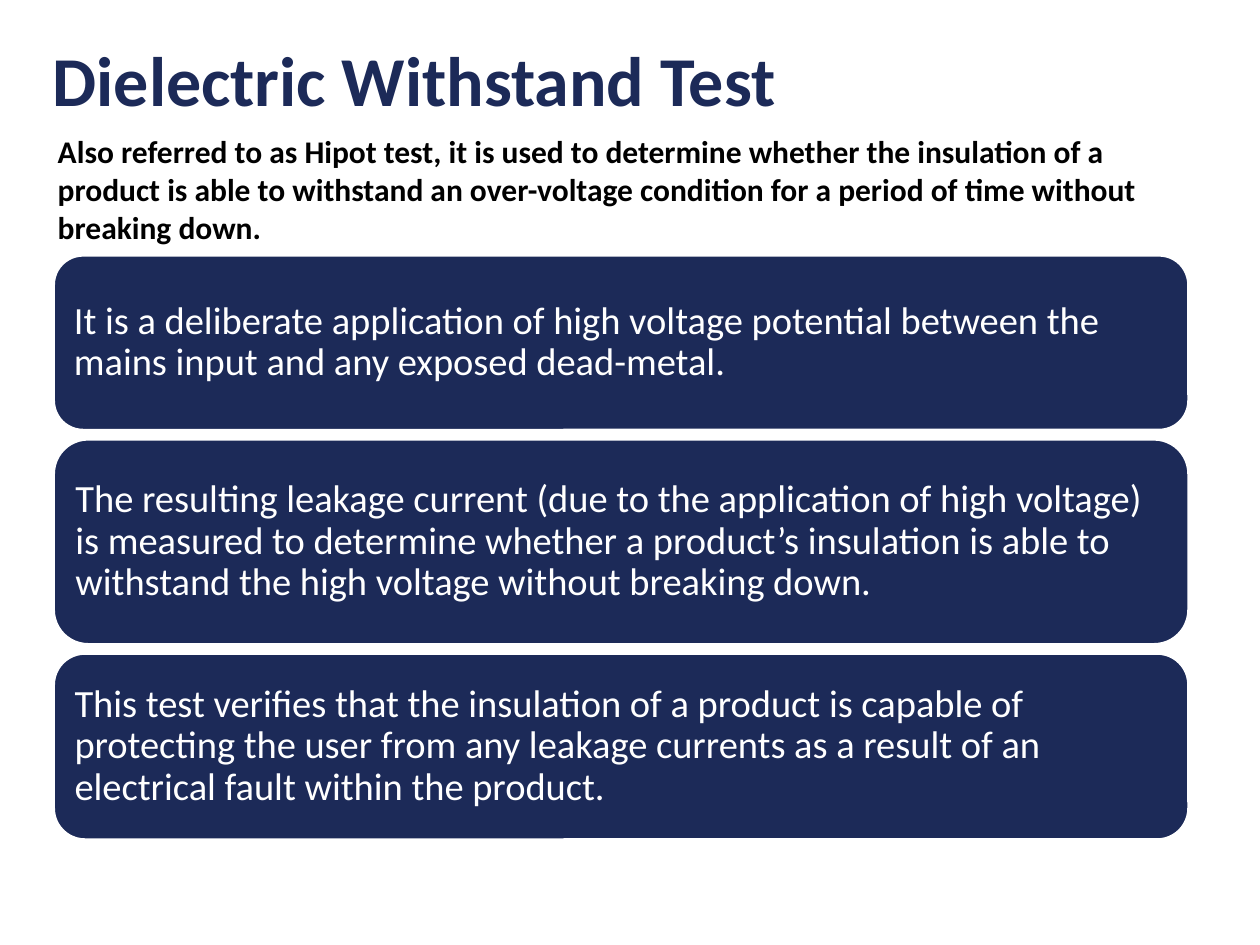
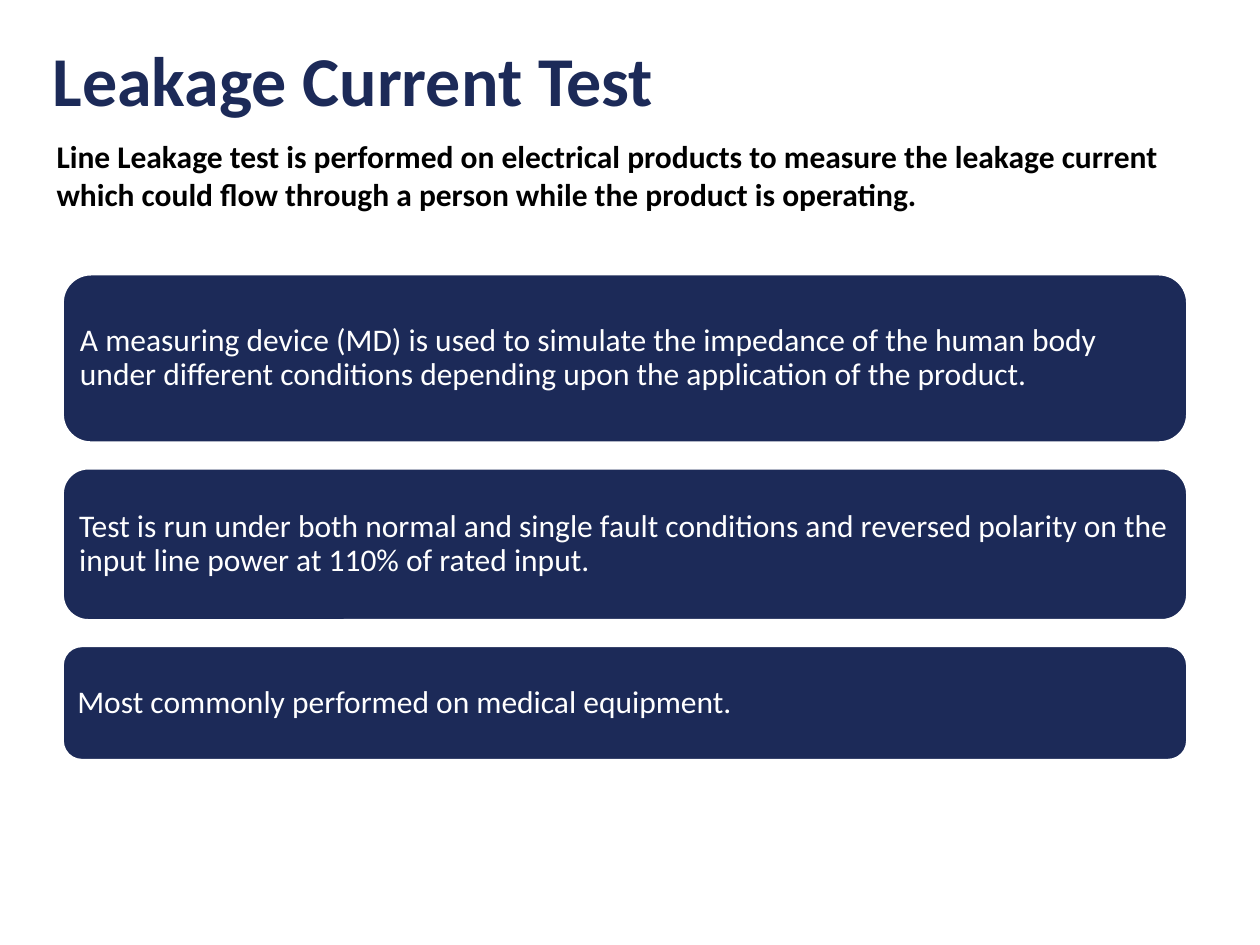
"""Build two slides on electrical safety tests: dielectric withstand and leakage current."""
import pptx
import pptx.dml.color
import pptx.enum.shapes
import pptx.enum.text
import pptx.util
from pptx.util import Inches

NAVY, WHITE, BLACK = "1C2A58", "FFFFFF", "000000"
FONT = "Calibri"
TITLE_AREA = (0.32, 0.32, 9, 1.37)

TESTS = [
    {
        "title": "Dielectric Withstand Test",
        "summary": "Also referred to as Hipot test, it is used to determine whether the insulation "
                   "of a product is able to withstand an over-voltage condition for a period of "
                   "time without breaking down.",
        "summary_area": (0.36, 1, 8.92, 1.01),
        "left": 0.43, "top": 2.03, "width": 9, "gap": 0.08, "inset": 0.09, "size": 22,
        "cards": [
            (1.38, "It is a deliberate application of high voltage potential between the mains "
                   "input and any exposed dead-metal."),
            (1.62, "The resulting leakage current (due to the application of high voltage) is "
                   "measured to determine whether a product’s insulation is able to withstand "
                   "the high voltage without breaking down."),
            (1.47, "This test verifies that the insulation of a product is capable of protecting "
                   "the user from any leakage currents as a result of an electrical fault within "
                   "the product."),
        ],
    },
    {
        "title": "Leakage Current Test",
        "summary": "Line Leakage test is performed on electrical products to measure the leakage "
                   "current which could flow through a person while the product is operating.",
        "summary_area": (0.35, 1.04, 9.08, 0.71),
        "left": 0.5, "top": 2.18, "width": 8.92, "gap": 0.21, "inset": 0.07, "size": 18,
        "cards": [
            (1.33, "A measuring device (MD) is used to simulate the impedance of the human body "
                   "under different conditions depending upon the application of the product."),
            (1.2, "Test is run under both normal and single fault conditions and reversed "
                  "polarity on the input line power at 110% of rated input."),
            (0.9, "Most commonly performed on medical equipment."),
        ],
    },
]


def color(hex_code):
    return pptx.dml.color.RGBColor.from_string(hex_code)


def write(shape, text, size, hex_code, bold=False, spacing=1.0):
    frame = shape.text_frame
    frame.text = text
    frame.word_wrap = True
    para = frame.paragraphs[0]
    para.alignment = pptx.enum.text.PP_ALIGN.LEFT
    para.line_spacing = spacing
    font = para.runs[0].font
    font.name, font.size, font.bold = FONT, pptx.util.Pt(size), bold
    font.color.rgb = color(hex_code)
    return frame


def add_text(slide, area, *style, **options):
    box = slide.shapes.add_textbox(*map(Inches, area))
    return write(box, *style, **options)


def add_card(slide, area, text, size, inset):
    card = slide.shapes.add_shape(
        pptx.enum.shapes.MSO_SHAPE.ROUNDED_RECTANGLE, *map(Inches, area))
    card.shadow.inherit = False
    card.fill.solid()
    card.fill.fore_color.rgb = color(NAVY)
    card.line.color.rgb = color(WHITE)
    card.line.width = pptx.util.Pt(1)
    frame = write(card, text, size, WHITE, spacing=0.9)
    frame.vertical_anchor = pptx.enum.text.MSO_ANCHOR.MIDDLE
    frame.margin_left = frame.margin_right = Inches(inset)
    frame.margin_top = frame.margin_bottom = Inches(inset)


def add_test_slide(deck, test):
    slide = deck.slides.add_slide(deck.slide_layouts[6])
    top = test["top"]
    for height, text in test["cards"]:
        area = (test["left"], top, test["width"], height)
        add_card(slide, area, text, test["size"], test["inset"])
        top += height + test["gap"]
    add_text(slide, TITLE_AREA, test["title"], 40, NAVY, bold=True, spacing=0.9)
    summary = add_text(slide, test["summary_area"], test["summary"], 18, BLACK, bold=True)
    summary.auto_size = pptx.enum.text.MSO_AUTO_SIZE.SHAPE_TO_FIT_TEXT


def main():
    deck = pptx.Presentation()
    deck.slide_width, deck.slide_height = Inches(10), Inches(7.5)
    for test in TESTS:
        add_test_slide(deck, test)
    deck.save("out.pptx")


if __name__ == "__main__":
    main()
